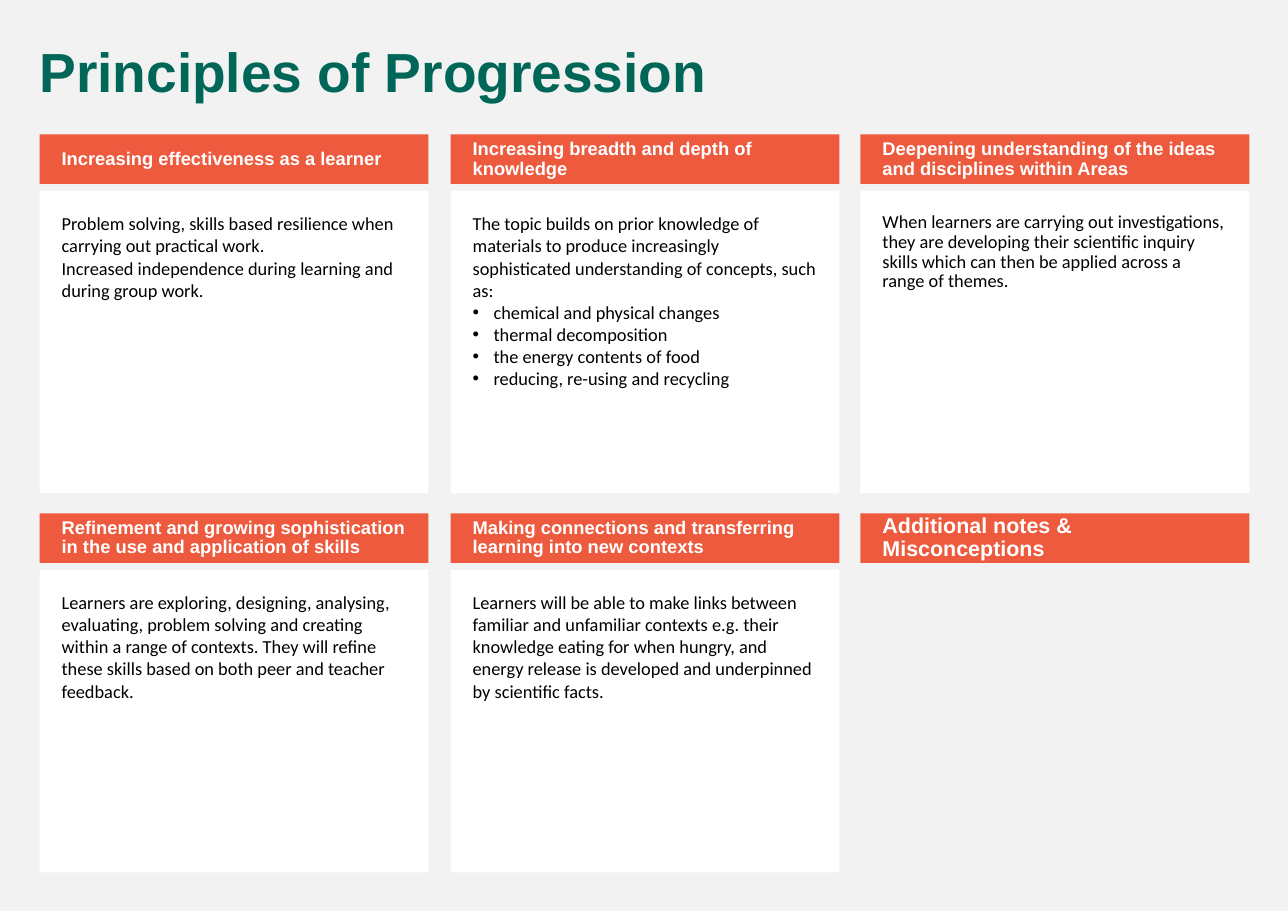
"""Build the Principles of Progression slide: a title above six headed panels."""
from pptx import Presentation, util as u
from pptx.dml.color import RGBColor
from pptx.enum import shapes, text
from pptx.oxml import parse_xml
from pptx.oxml.ns import nsdecls

PAPER, WHITE, ORANGE, GREEN, BLACK = "F2F2F2", "FFFFFF", "ED5A3E", "006758", "000000"
COLUMNS = (0.36, 4.09, 7.81)
ROWS = (1.22, 4.66)
PANEL_WIDTH, HEADER_HEIGHT, BODY_HEIGHT, BODY_OFFSET = 3.53, 0.45, 2.75, 0.51
BULLET = "• "


def colour(fill, value):
    fill.solid()
    fill.fore_color.rgb = RGBColor.from_string(value)


def write(shape, lines, margins, anchor, spacing, font):
    frame = shape.text_frame
    sides = ("margin_left", "margin_top", "margin_right", "margin_bottom")
    settings = dict(zip(sides, map(u.Inches, margins)), word_wrap=True, vertical_anchor=anchor)
    for name, value in settings.items():
        setattr(frame, name, value)
    for index, line in enumerate(lines):
        para = frame.add_paragraph() if index else frame.paragraphs[0]
        para.alignment = text.PP_ALIGN.LEFT
        para.line_spacing = spacing
        if line.startswith(BULLET):
            properties = para._p.get_or_add_pPr()
            properties.set("marL", str(u.Inches(0.19)))
            properties.set("indent", str(u.Inches(-0.19)))
            properties.append(parse_xml(f'<a:buFont {nsdecls("a")} typeface="Arial"/>'))
            properties.append(parse_xml(f'<a:buChar {nsdecls("a")} char="•"/>'))
        span = para.add_run()
        span.text = line.removeprefix(BULLET)
        for name, value in font.items():
            if name == "color":
                colour(span.font.fill, value)
            else:
                setattr(span.font, name, value)


panels = [
    ("Increasing effectiveness as a learner", 12, 1.0, [
        "Problem solving, skills based resilience when carrying out practical work.",
        "Increased independence during learning and during group work."]),
    ("Increasing breadth and depth of knowledge", 12, 1.0, [
        "The topic builds on prior knowledge of materials to produce "
        "increasingly sophisticated understanding of concepts, such as:",
        "• chemical and physical changes",
        "• thermal decomposition",
        "• the energy contents of food",
        "• reducing, re-using and recycling"]),
    ("Deepening understanding of the ideas and disciplines within Areas", 12, 0.9, [
        "When learners are carrying out investigations, they are developing their scientific "
        "inquiry skills which can then be applied across a range of themes."]),
    ("Refinement and growing sophistication in the use and application of skills", 12, 1.0, [
        "Learners are exploring, designing, analysing, evaluating, problem solving and creating "
        "within a range of contexts. They will refine these skills based on both peer and "
        "teacher feedback."]),
    ("Making connections and transferring learning into new contexts", 12, 1.0, [
        "Learners will be able to make links between familiar and unfamiliar contexts e.g. their "
        "knowledge eating for when hungry, and energy release is developed and "
        "underpinned by scientific facts."]),
    ("Additional notes & Misconceptions", 14, 1.0, []),
]

deck = Presentation()
deck.slide_width, deck.slide_height = u.Inches(11.69), u.Inches(8.27)
page = deck.slides.add_slide(deck.slide_layouts[6])
colour(page.background.fill, PAPER)

title = page.shapes.add_textbox(*map(u.Inches, (0.26, 0.36, 11.08, 0.65)))
write(title, ["Principles of Progression"], (0.1, 0.05, 0.1, 0.05), text.MSO_ANCHOR.TOP, 0.9,
      {"name": "Arial", "size": u.Pt(36), "bold": True, "color": GREEN})

for index, (heading, heading_size, body_spacing, body) in enumerate(panels):
    row, column = divmod(index, len(COLUMNS))
    left, top = COLUMNS[column], ROWS[row]
    parts = [(top, HEADER_HEIGHT, ORANGE, [heading], (0.2, 0.05, 0.1, 0.05),
              text.MSO_ANCHOR.MIDDLE, 0.9,
              {"name": "Arial", "size": u.Pt(heading_size), "bold": True, "color": WHITE})]
    if body:
        parts.append((top + BODY_OFFSET, BODY_HEIGHT, WHITE, body, (0.2, 0.2, 0.2, 0.2),
                      text.MSO_ANCHOR.TOP, body_spacing,
                      {"name": "Calibri", "size": u.Pt(12), "color": BLACK}))
    for part_top, height, fill, *content in parts:
        box = page.shapes.add_shape(shapes.MSO_SHAPE.RECTANGLE,
                                    *map(u.Inches, (left, part_top, PANEL_WIDTH, height)))
        box.shadow.inherit = False
        box.line.fill.background()
        colour(box.fill, fill)
        write(box, *content)

deck.save("out.pptx")
